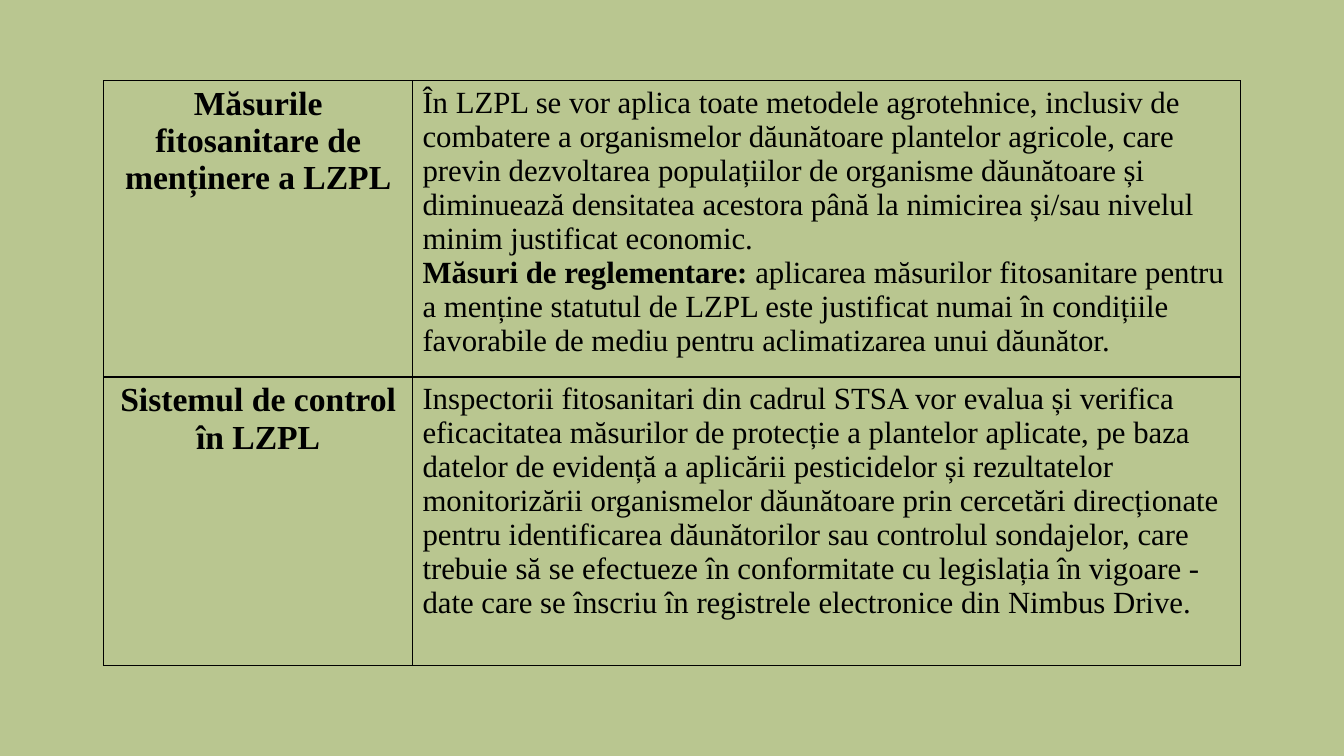
from dataclasses import dataclass
from typing import Optional

from lxml.etree import SubElement
from pptx import Presentation
from pptx.dml.color import RGBColor
from pptx.enum.text import PP_ALIGN
from pptx.oxml.ns import qn
from pptx.util import Inches, Pt


@dataclass(frozen=True)
class Theme:
    font: str = "Times New Roman"
    ink: str = "000000"
    back: str = "B9C690"
    head: int = 24
    body: int = 22
    line: int = 1


@dataclass(frozen=True)
class Note:
    lead: str
    text: str


@dataclass(frozen=True)
class Topic:
    name: str
    notes: tuple[Note, ...]
    share: float


THEME = Theme()
WIDE, HIGH = Inches(13.33), Inches(7.5)
LEFT, TOP = 0.0773, 0.1067
COLS = (0.2296, 0.6159)

TOPICS = (
    Topic(
        "Măsurile fitosanitare de menținere a LZPL",
        (
            Note(
                "",
                "În LZPL se vor aplica toate metodele agrotehnice, inclusiv de "
                "combatere a organismelor dăunătoare plantelor agricole, care "
                "previn dezvoltarea populațiilor de organisme dăunătoare și "
                "diminuează densitatea acestora până la nimicirea și/sau nivelul "
                "minim justificat economic.",
            ),
            Note(
                "Măsuri de reglementare:",
                " aplicarea măsurilor fitosanitare pentru a menține statutul de "
                "LZPL este justificat numai în condițiile favorabile de mediu "
                "pentru aclimatizarea unui dăunător.",
            ),
        ),
        0.392,
    ),
    Topic(
        "Sistemul de control în LZPL",
        (
            Note(
                "",
                "Inspectorii fitosanitari din cadrul STSA vor evalua și verifica "
                "eficacitatea măsurilor de protecție a plantelor aplicate, pe baza "
                "datelor de evidență a aplicării pesticidelor și rezultatelor "
                "monitorizării organismelor dăunătoare prin cercetări direcționate "
                "pentru identificarea dăunătorilor sau controlul sondajelor, care "
                "trebuie să se efectueze în conformitate cu legislația în vigoare - "
                "date care se înscriu în registrele electronice din Nimbus Drive.",
            ),
        ),
        0.3813,
    ),
)


def write(para, text: str, *, size: int, bold: bool = False,
          align: Optional[PP_ALIGN] = None) -> None:
    if align is not None:
        para.alignment = align
    run = para.add_run()
    run.text = text
    run.font.name = THEME.font
    run.font.size = Pt(size)
    run.font.bold = bold
    run.font.color.rgb = RGBColor.from_string(THEME.ink)


def frame(cell) -> None:
    props = cell._tc.get_or_add_tcPr()
    for side in ("a:lnL", "a:lnR", "a:lnT", "a:lnB"):
        edge = SubElement(props, qn(side), w=str(Pt(THEME.line)))
        fill = SubElement(edge, qn("a:solidFill"))
        SubElement(fill, qn("a:srgbClr"), val=THEME.ink)
    cell.fill.background()


def fill_row(table, index: int, topic: Topic) -> None:
    table.rows[index].height = round(HIGH * topic.share)
    name, body = table.cell(index, 0), table.cell(index, 1)
    frame(name)
    frame(body)
    write(name.text_frame.paragraphs[0], topic.name, size=THEME.head,
          bold=True, align=PP_ALIGN.CENTER)
    for rank, note in enumerate(topic.notes):
        text = body.text_frame
        para = text.add_paragraph() if rank else text.paragraphs[0]
        if note.lead:
            write(para, note.lead, size=THEME.body, bold=True)
        write(para, note.text, size=THEME.body)


def main() -> None:
    deck = Presentation()
    deck.slide_width, deck.slide_height = WIDE, HIGH
    slide = deck.slides.add_slide(deck.slide_layouts[6])
    back = slide.background.fill
    back.solid()
    back.fore_color.rgb = RGBColor.from_string(THEME.back)

    tall = sum(topic.share for topic in TOPICS)
    table = slide.shapes.add_table(
        len(TOPICS), len(COLS), round(WIDE * LEFT), round(HIGH * TOP),
        round(WIDE * sum(COLS)), round(HIGH * tall)).table
    table.first_row = table.horz_banding = False
    for column, share in zip(table.columns, COLS):
        column.width = round(WIDE * share)
    for index, topic in enumerate(TOPICS):
        fill_row(table, index, topic)
    deck.save("out.pptx")


if __name__ == "__main__":
    main()
